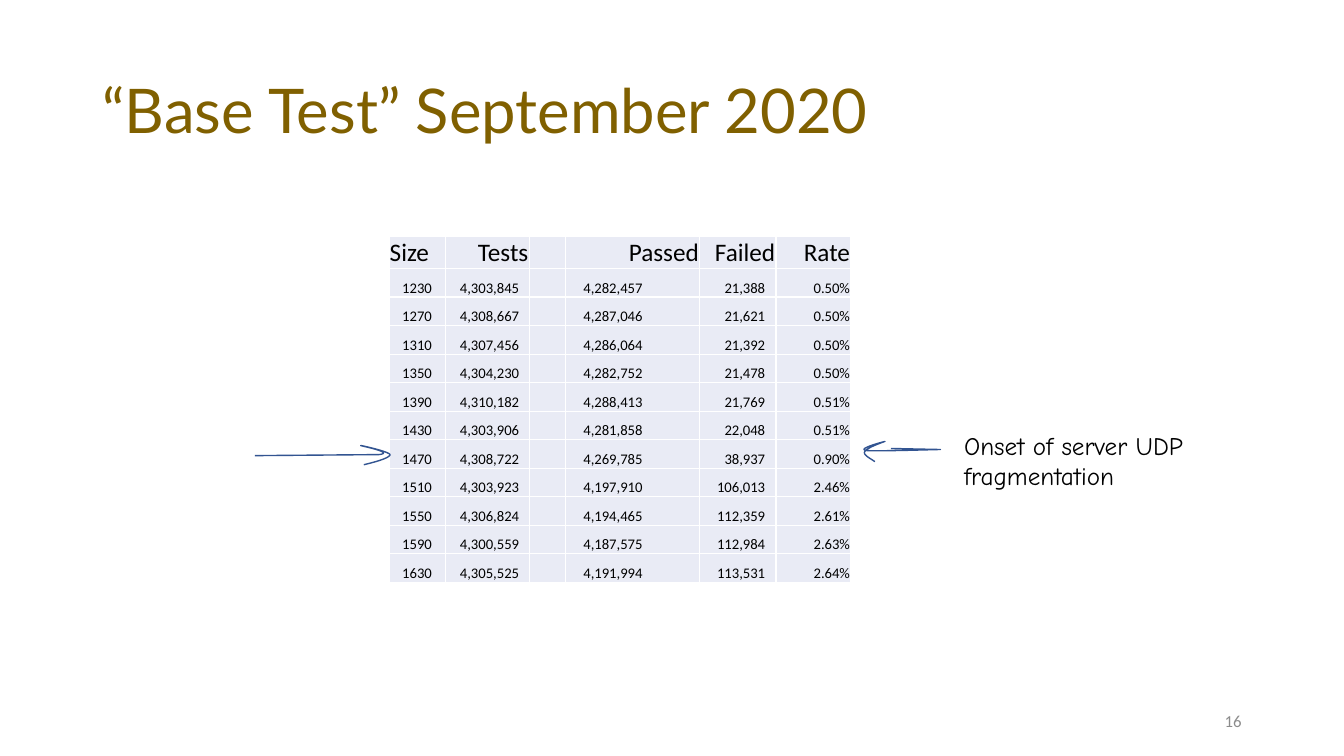
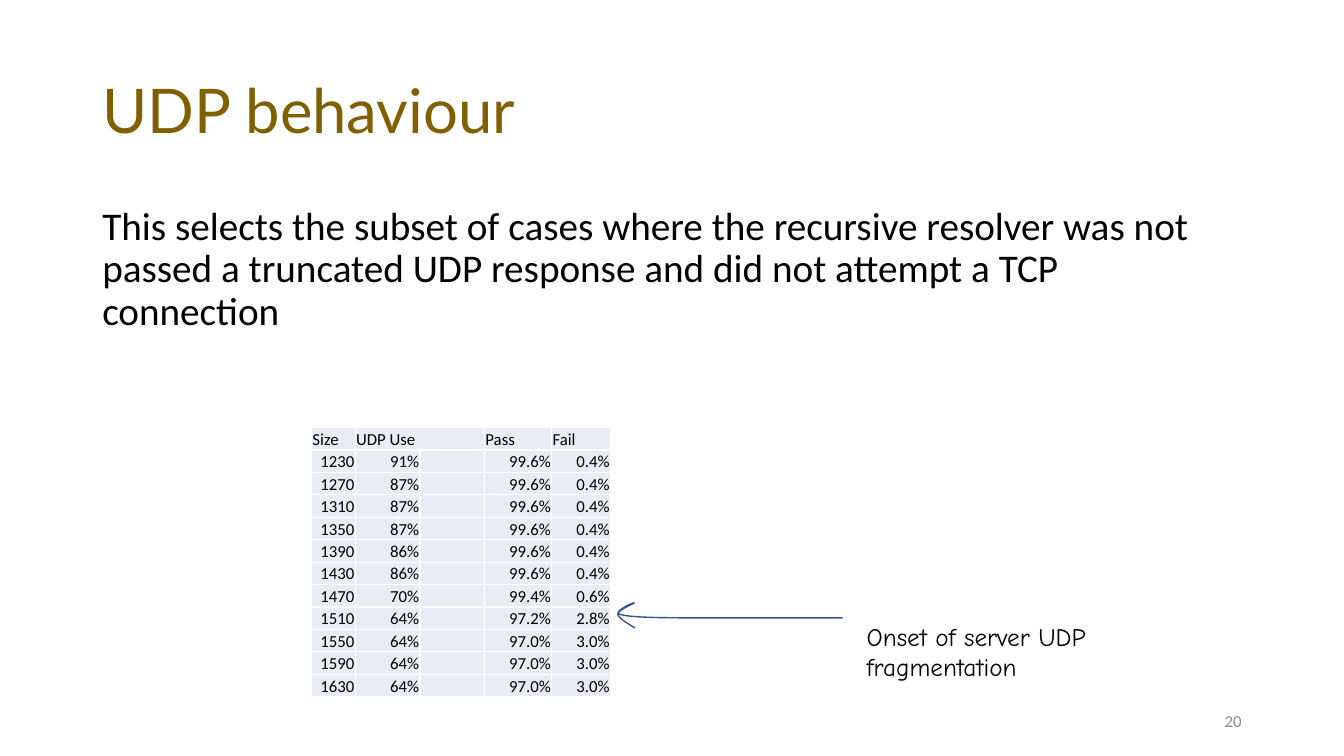
from pptx import Presentation
from pptx.dml.color import RGBColor
from pptx.enum.text import MSO_ANCHOR as Anchor, MSO_AUTO_SIZE as AutoSize, PP_ALIGN as Align
from pptx.oxml import parse_xml
from pptx.oxml.ns import nsdecls
from pptx.util import Inches, Pt

COLUMNS, ROWS = 160, 90
UNIT = Inches(1) // 12

GOLD = RGBColor(0x80, 0x60, 0x00)
BLACK = RGBColor(0x00, 0x00, 0x00)
GREY = RGBColor(0x8C, 0x8C, 0x8C)
WHITE = RGBColor(0xFF, 0xFF, 0xFF)
PALE = RGBColor(0xE9, 0xEB, 0xF5)
BLUE = RGBColor(0x32, 0x54, 0x91)

ONSET = ("Onset of server UDP", "fragmentation")
SIZES = range(1230, 1631, 40)


def grid(*lengths):
    return [round(length * UNIT) for length in lengths]


def curve_points(start, first, second, end, steps=16):
    for step in range(1, steps + 1):
        t = step / steps
        weights = ((1 - t) ** 3, 3 * t * (1 - t) ** 2, 3 * t ** 2 * (1 - t), t ** 3)
        yield tuple(
            sum(weight * value for weight, value in zip(weights, axis))
            for axis in zip(start, first, second, end)
        )


class Deck:
    STYLES = {
        "title": ("Lato", 44, GOLD),
        "body": ("Calibri", 28, BLACK),
        "callout": ("Comic Neue", 18, BLACK),
        "number": ("Calibri", 12, GREY),
    }

    def __init__(self):
        self.file = Presentation()
        self.file.slide_width, self.file.slide_height = grid(COLUMNS, ROWS)
        self.page = None

    def add_span(self, para, text, style, **layout):
        name, size, color = style
        for key, value in layout.items():
            setattr(para, key, value)
        span = para.add_run()
        span.text = text
        for key, value in {"name": name, "size": Pt(size), "bold": False}.items():
            setattr(span.font, key, value)
        span.font.color.rgb = color

    def fill_box(self, box, lines, style, anchor=Anchor.TOP, **layout):
        frame = box.text_frame
        settings = {"word_wrap": True, "auto_size": AutoSize.NONE, "vertical_anchor": anchor}
        for key, value in settings.items():
            setattr(frame, key, value)
        for index, line in enumerate(lines):
            para = frame.add_paragraph() if index else frame.paragraphs[0]
            self.add_span(para, line, self.STYLES[style], **layout)

    def text(self, place, lines, style, **layout):
        box = self.page.shapes.add_textbox(*grid(*place))
        self.fill_box(box, lines, style, **layout)

    def start_page(self, title, number):
        self.page = self.file.slides.add_slide(self.file.slide_layouts[5])
        box = self.page.shapes.title
        for key, value in zip(("left", "top", "width", "height"), grid(11, 4.8, 138, 17.4)):
            setattr(box, key, value)
        self.fill_box(box, [title], "title", Anchor.MIDDLE, alignment=Align.LEFT, line_spacing=0.9)
        self.text((113, 83.4, 36, 4.8), [str(number)], "number",
                  anchor=Anchor.MIDDLE, alignment=Align.RIGHT)

    def callout(self, left, top):
        self.text((left, top, 38.2, 8.5), ONSET, "callout")

    def arrow(self, *points):
        start, bend, *controls = points
        outline = [bend]
        for index in range(0, len(controls), 3):
            outline.extend(curve_points(outline[-1], *controls[index:index + 3]))
        builder = self.page.shapes.build_freeform(*grid(*start))
        builder.add_line_segments([grid(*point) for point in outline], close=False)
        shape = builder.convert_to_shape()
        shape.shadow.inherit = False
        shape.fill.background()
        shape.line.color.rgb = BLUE
        shape.line.width = Pt(1)

    def cell(self, cell, text, size, alignment, inset):
        margins = grid(0.1, inset, 0.1, 0)
        for side, value in zip(("left", "right", "top", "bottom"), margins):
            setattr(cell, f"margin_{side}", value)
        cell.vertical_anchor = Anchor.BOTTOM
        cell.fill.solid()
        cell.fill.fore_color.rgb = PALE
        for position, side in enumerate("LRTB"):
            cell._tc.get_or_add_tcPr().insert(position, parse_xml(
                f'<a:ln{side} {nsdecls("a")} w="{Pt(1)}"><a:solidFill>'
                f'<a:srgbClr val="{WHITE}"/></a:solidFill></a:ln{side}>'))
        para = cell.text_frame.paragraphs[0]
        if text:
            self.add_span(para, text, ("Calibri", size, BLACK), alignment=alignment)
        else:
            para._p.get_or_add_endParaRPr().set("sz", str(round(size * 100)))

    def table(self, left, top, widths, row_height, rows, sizes, head_aligns, aligns, insets):
        place = grid(left, top, sum(widths), row_height * len(rows))
        table = self.page.shapes.add_table(len(rows), len(widths), *place).table
        table.first_row = table.horz_banding = False
        for column, width in zip(table.columns, grid(*widths)):
            column.width = width
        for index, (row, values) in enumerate(zip(table.rows, rows)):
            row.height = grid(row_height)[0]
            size = sizes[min(index, 1)]
            row_aligns = aligns if index else head_aligns
            row_insets = insets if index else [0.1] * len(widths)
            for cell, value, align, inset in zip(row.cells, values, row_aligns, row_insets):
                self.cell(cell, value, size, align, inset)
        return table


def base_test(deck):
    deck.start_page("“Base Test” September 2020", 16)
    results = [
        ("4,303,845", "4,282,457", "21,388", "0.50%"),
        ("4,308,667", "4,287,046", "21,621", "0.50%"),
        ("4,307,456", "4,286,064", "21,392", "0.50%"),
        ("4,304,230", "4,282,752", "21,478", "0.50%"),
        ("4,310,182", "4,288,413", "21,769", "0.51%"),
        ("4,303,906", "4,281,858", "22,048", "0.51%"),
        ("4,308,722", "4,269,785", "38,937", "0.90%"),
        ("4,303,923", "4,197,910", "106,013", "2.46%"),
        ("4,306,824", "4,194,465", "112,359", "2.61%"),
        ("4,300,559", "4,187,575", "112,984", "2.63%"),
        ("4,305,525", "4,191,994", "113,531", "2.64%"),
    ]
    rows = [("Size", "Tests", "", "Passed", "Failed", "Rate")]
    rows += [(str(size), tests, "", *rest) for size, (tests, *rest) in zip(SIZES, results)]
    deck.table(
        46.3, 28.2, (6.7, 10, 4.3, 16, 9.1, 8.9), 3.4, rows, (18, 10.5),
        [Align.LEFT] + [Align.RIGHT] * 5,
        [Align.CENTER] + [Align.RIGHT] * 5,
        (0.1, 1.2, 0.1, 6.8, 1.3, 0.1),
    )
    deck.arrow(
        (106.08, 53.4), (111.96, 53.52),
        (111.48, 53.52), (104.16, 53.76), (103.08, 53.64),
        (102, 53.4), (105.36, 52.56), (105.36, 52.56),
        (105.36, 52.56), (103.2, 53.28), (102.96, 53.76),
        (102.72, 54.12), (103.44, 54.48), (104.16, 54.96),
    )
    deck.callout(113.6, 50.6)
    deck.arrow(
        (30.36, 54.24), (45.12, 54.12),
        (47.16, 53.88), (42.72, 53.04), (42.96, 53.04),
        (43.08, 53.04), (46.32, 53.76), (46.44, 54.12),
        (46.44, 54.48), (44.88, 54.96), (43.32, 55.32),
    )


def udp_behaviour(deck):
    deck.start_page("UDP behaviour", 20)
    deck.text(
        (11, 24, 138, 57.1),
        ["This selects the subset of cases where the recursive resolver was not "
         "passed a truncated UDP response and did not attempt a TCP connection"],
        "body", line_spacing=0.9, space_before=Pt(10),
    )
    results = [
        ("91%", "99.6%", "0.4%"),
        *[("87%", "99.6%", "0.4%")] * 3,
        *[("86%", "99.6%", "0.4%")] * 2,
        ("70%", "99.4%", "0.6%"),
        ("64%", "97.2%", "2.8%"),
        *[("64%", "97.0%", "3.0%")] * 3,
    ]
    rows = [("Size", "UDP Use", "", "Pass", "Fail")]
    rows += [(str(size), use, "", *rest) for size, (use, *rest) in zip(SIZES, results)]
    table = deck.table(
        37.1, 50.9, (5.2, 7.7, 7.7, 8, 7), 2.67, rows, (12, 12),
        [Align.LEFT] * 5, [Align.RIGHT] * 5, [0.1] * 5,
    )
    table.cell(0, 1).merge(table.cell(0, 2))
    deck.callout(102, 73.4)
    deck.arrow(
        (100.32, 73.56), (84.24, 73.56),
        (79.92, 73.56), (75.48, 73.56), (74.04, 73.2),
        (72.6, 72.96), (75.6, 71.88), (75.48, 71.76),
        (75.36, 71.76), (73.56, 72.48), (73.56, 73.08),
        (73.56, 73.56), (74.64, 74.16), (75.6, 74.76),
    )


def main():
    deck = Deck()
    base_test(deck)
    udp_behaviour(deck)
    deck.file.save("out.pptx")


if __name__ == "__main__":
    main()
